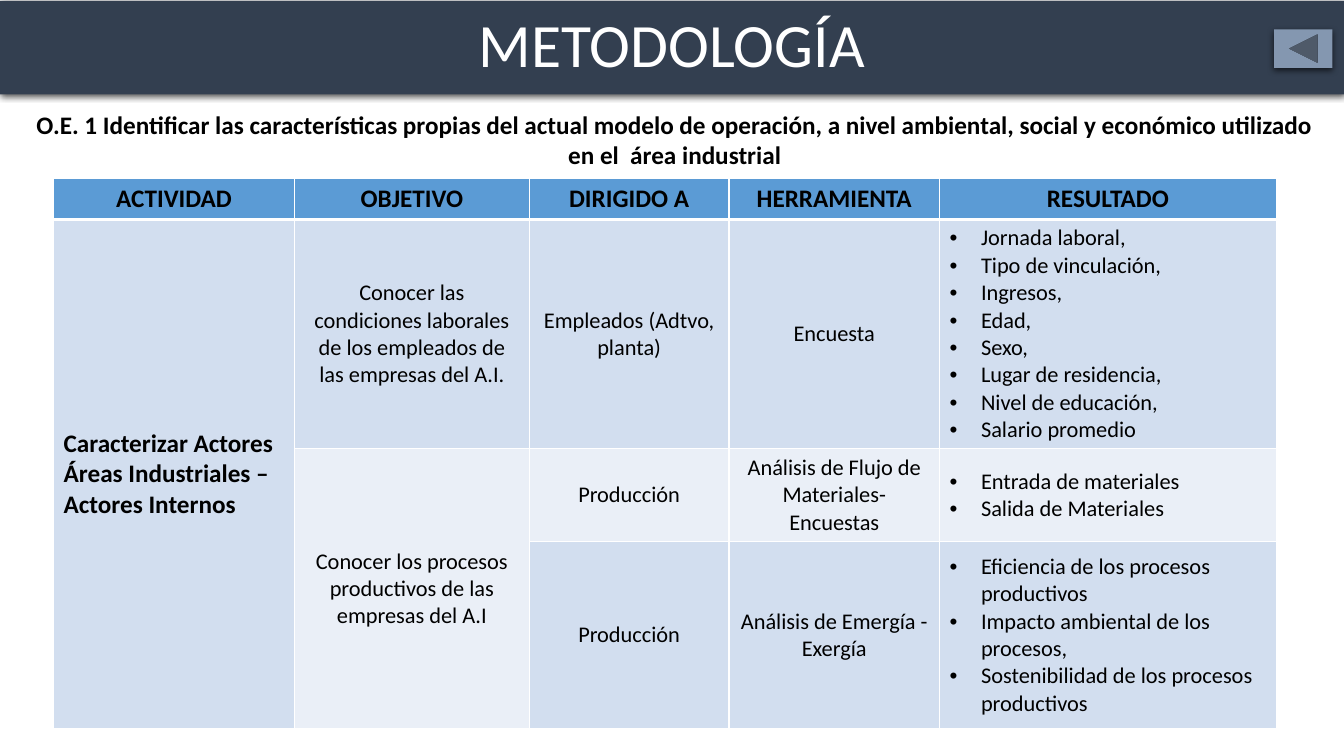
from lxml.etree import SubElement as Sub
from pptx import Presentation
from pptx.dml.color import RGBColor as Rgb
from pptx.enum.shapes import MSO_SHAPE as Kind
from pptx.enum.text import MSO_ANCHOR as Anchor, PP_ALIGN as Align
from pptx.oxml.ns import qn
from pptx.util import Cm, Pt

HUES = {"bar": "333F50", "key": "8497B0", "head": "5B9BD5", "dark": "D2DEEF",
        "pale": "EAEFF7", "ink": "000000", "white": "FFFFFF"}


class Deck:
    def __init__(self, font="Calibri"):
        self.font = font
        self.prs = Presentation()
        self.prs.slide_width, self.prs.slide_height = Cm(33.87), Cm(19.05)
        self.slide = self.prs.slides.add_slide(self.prs.slide_layouts[6])

    def paint(self, part, hue):
        part.fill.solid()
        part.fill.fore_color.rgb = Rgb.from_string(HUES[hue])

    def label(self, frame, lines, size, hue="ink", bold=False, align=Align.CENTER):
        frame.word_wrap = True
        frame.text = "\n".join(lines)
        for par in frame.paragraphs:
            par.alignment = align
            font = par.font
            font.name, font.size, font.bold = self.font, Pt(size), bold
            font.color.rgb = Rgb.from_string(HUES[hue])

    def shape(self, kind, box, hue):
        item = self.slide.shapes.add_shape(kind, *map(Cm, box))
        self.paint(item, hue)
        item.line.fill.background()
        item.shadow.inherit = False
        glow = item._element.spPr.find(qn("a:effectLst"))
        drop = Sub(glow, qn("a:outerShdw"), blurRad=str(Pt(4.5)), dist=str(Pt(1.5)),
                   dir="5400000", algn="ctr", rotWithShape="0")
        tone = Sub(drop, qn("a:srgbClr"), val=HUES["ink"])
        Sub(tone, qn("a:alpha"), val="63000")
        return item

    def text(self, box, line, size, **style):
        item = self.slide.shapes.add_textbox(*map(Cm, box))
        self.label(item.text_frame, [line], size, **style)

    def bullets(self, frame):
        for par in frame.paragraphs:
            props = par._p.get_or_add_pPr()
            props.set("marL", str(Cm(0.79)))
            props.set("indent", str(-Cm(0.79)))
            font = Sub(props, qn("a:buFont"), typeface="Arial")
            mark = Sub(props, qn("a:buChar"), char="•")
            props.insert(0, font)
            props.insert(1, mark)

    def edges(self, cell, foot):
        props = cell._tc.get_or_add_tcPr()
        for spot, side in enumerate("LRTB"):
            width = foot if side == "B" else 1
            line = Sub(props, qn("a:ln" + side), w=str(Pt(width)))
            Sub(Sub(line, qn("a:solidFill")), qn("a:srgbClr"), val=HUES["white"])
            props.insert(spot, line)

    def table(self, spot, cols, rows):
        item = self.slide.shapes.add_table(
            len(rows), len(cols), *map(Cm, (*spot, sum(cols), sum(rows))))
        grid = item.table
        for col, width in zip(grid.columns, cols):
            col.width = Cm(width)
        for row, height in zip(grid.rows, rows):
            row.height = Cm(height)
        return grid


def main():
    deck = Deck()

    # Title bar
    bar = deck.shape(Kind.RECTANGLE, (0, 0.02, 33.87, 2.36), "bar")
    deck.label(bar.text_frame, ["METODOLOGÍA"], 44, "white")
    bar.text_frame.paragraphs[0].line_spacing = 0.9

    # Table of activities: None marks a cell covered by the one above
    data = [
        ["ACTIVIDAD", "OBJETIVO", "DIRIGIDO A", "HERRAMIENTA", "RESULTADO"],
        ["Caracterizar Actores Áreas Industriales – Actores Internos",
         "Conocer las condiciones laborales de los empleados de las empresas del A.I.",
         "Empleados (Adtvo, planta)", "Encuesta",
         "Jornada laboral,\nTipo de vinculación,\nIngresos,\nEdad,\nSexo,\n"
         "Lugar de residencia,\nNivel de educación,\nSalario promedio"],
        [None, "Conocer los procesos productivos de las empresas del A.I",
         "Producción", "Análisis de Flujo de Materiales-\nEncuestas",
         "Entrada de materiales\nSalida de Materiales"],
        [None, None, "Producción", "Análisis de Emergía - Exergía",
         "Eficiencia de los procesos productivos\nImpacto ambiental de los procesos,\n"
         "Sostenibilidad de los procesos productivos"],
    ]
    grid = deck.table((1.35, 4.5), (6.07, 5.92, 5.03, 5.31, 8.48),
                      (1.02, 5.77, 2.34, 4.72))
    for col in (0, 1):
        grid.cell(col + 1, col).merge(grid.cell(3, col))
    for r, row in enumerate(data):
        for c, words in enumerate(row):
            cell = grid.cell(r, c)
            hue = "head" if r == 0 else "pale" if r == 2 and c else "dark"
            deck.paint(cell, hue)
            deck.edges(cell, 1 if r else 3)
            if words is None:
                continue
            bold = r == 0 or c == 0
            left = r > 0 and c in (0, 4)
            deck.label(cell.text_frame, words.split("\n"), 18 if bold else 16,
                       bold=bold, align=Align.LEFT if left else Align.CENTER)
            if r:
                cell.vertical_anchor = Anchor.MIDDLE
            if r and c == 4:
                deck.bullets(cell.text_frame)

    # Back button
    deck.shape(Kind.ACTION_BUTTON_BACK_OR_PREVIOUS, (32.11, 0.74, 1.47, 0.97), "key")

    # Objective
    deck.text((0.38, 2.62, 33.25, 1.8),
              "O.E. 1 Identificar las características propias del actual modelo de "
              "operación, a nivel ambiental, social y económico utilizado en el  "
              "área industrial", 18, bold=True)

    deck.prs.save("out.pptx")


if __name__ == "__main__":
    main()
